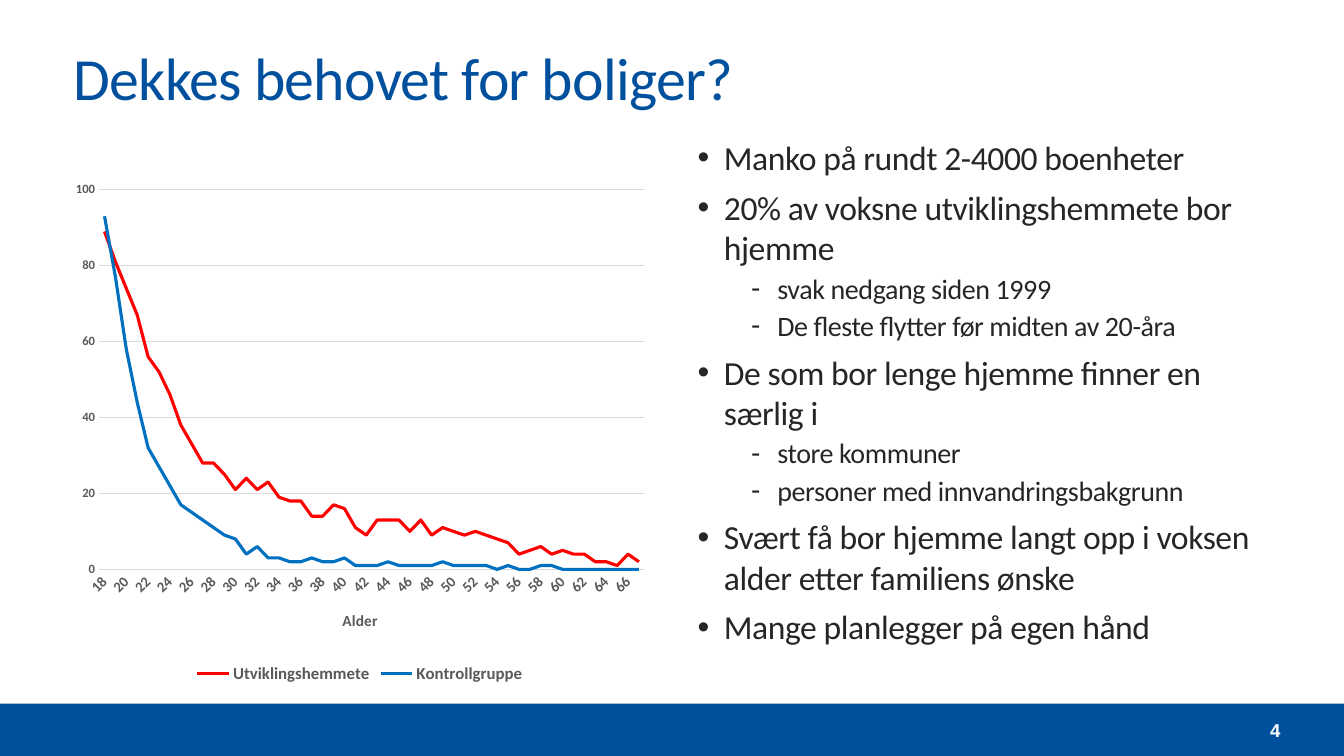
import pptx
import pptx.chart.data
import pptx.dml.color
import pptx.enum.chart
import pptx.enum.shapes
import pptx.enum.text
import pptx.oxml
import pptx.oxml.ns
import pptx.util
from dataclasses import dataclass


@dataclass(frozen=True)
class Theme:
    font: str = "Calibri"
    number_font: str = "Arial"
    blue: str = "00509E"
    white: str = "FFFFFF"
    body: str = "262626"
    chart_text: str = "595959"
    grid: str = "D9D9D9"
    red_line: str = "FF0000"
    blue_line: str = "0070C0"
    title_size: float = 42.7
    body_sizes: tuple = (24, 20)
    number_size: float = 13.3
    category_size: float = 10.5
    value_size: float = 9
    axis_title_size: float = 11
    legend_size: float = 12


theme = Theme()
Inches, Pt = pptx.util.Inches, pptx.util.Pt
color_of = pptx.dml.color.RGBColor.from_string
qn = pptx.oxml.ns.qn


def style_font(font, size, color, bold=False, name=theme.font):
    font.size = Pt(size)
    font.bold = bold
    font.name = name
    font.color.rgb = color_of(color)


def place(shape, left, top, width, height):
    shape.left, shape.top = Inches(left), Inches(top)
    shape.width, shape.height = Inches(width), Inches(height)


# Grid: two equal columns between the margins, footer along the bottom
slide_width, slide_height = 13.33, 7.5
margin, gap = 0.63, 0.31
content_width = slide_width - 2 * margin
column_width = (content_width - gap) / 2
right_column = margin + column_width + gap
footer_height = 0.52
footer_top = slide_height - footer_height
content_bottom = 6.82
title_top, title_height = 0.31, 0.9
body_top, chart_top = 1.31, 1.73

presentation = pptx.Presentation()
presentation.slide_width = Inches(slide_width)
presentation.slide_height = Inches(slide_height)
slide = presentation.slides.add_slide(presentation.slide_layouts[1])

# Footer bar and slide number
footer = slide.shapes.add_shape(pptx.enum.shapes.MSO_SHAPE.RECTANGLE, 0, 0, 0, 0)
place(footer, 0, footer_top, slide_width, footer_height)
footer.shadow.inherit = False
footer.fill.solid()
footer.fill.fore_color.rgb = color_of(theme.blue)
footer.line.fill.background()

number_width = 0.95
number_box = slide.shapes.add_textbox(0, 0, 0, 0)
place(number_box, slide_width - margin - number_width, footer_top, number_width, footer_height)
number_frame = number_box.text_frame
number_frame.word_wrap = True
number_frame.vertical_anchor = pptx.enum.text.MSO_ANCHOR.MIDDLE
number_frame.margin_left = number_frame.margin_right = 0
number_frame.margin_top = number_frame.margin_bottom = 0
paragraph = number_frame.paragraphs[0]
paragraph.alignment = pptx.enum.text.PP_ALIGN.RIGHT
run = paragraph.add_run()
run.text = "4"
style_font(run.font, theme.number_size, theme.white, True, theme.number_font)

# Title
title = slide.shapes.title
place(title, margin, title_top, content_width, title_height)
title.text_frame.auto_size = pptx.enum.text.MSO_AUTO_SIZE.NONE
title.text_frame.vertical_anchor = pptx.enum.text.MSO_ANCHOR.MIDDLE
paragraph = title.text_frame.paragraphs[0]
paragraph.alignment = pptx.enum.text.PP_ALIGN.LEFT
run = paragraph.add_run()
run.text = "Dekkes behovet for boliger?"
style_font(run.font, theme.title_size, theme.blue)
run.font._element.set("spc", "-50")

# Bullet list: level and wording
bullets = [
    (0, "Manko på rundt 2-4000 boenheter"),
    (0, "20% av voksne utviklingshemmete bor hjemme"),
    (1, "svak nedgang siden 1999"),
    (1, "De fleste flytter før midten av 20-åra"),
    (0, "De som bor lenge hjemme finner en særlig i"),
    (1, "store kommuner"),
    (1, "personer med innvandringsbakgrunn"),
    (0, "Svært få bor hjemme langt opp i voksen alder etter familiens ønske"),
    (0, "Mange planlegger på egen hånd"),
]
bullet_signs, indents, spaces_before = "•-", (0.26, 0.79), (6.7, 2.7)
hanging = 0.26

body = slide.placeholders[1]
place(body, right_column, body_top, column_width, content_bottom - body_top)
body.text_frame.auto_size = pptx.enum.text.MSO_AUTO_SIZE.NONE
for index, (level, text) in enumerate(bullets):
    paragraph = body.text_frame.add_paragraph() if index else body.text_frame.paragraphs[0]
    paragraph.level = level
    properties = paragraph._p.get_or_add_pPr()
    properties.set("marL", str(Inches(indents[level])))
    properties.set("indent", str(-Inches(hanging)))
    for tag, key, value in (("buFont", "typeface", "Arial"), ("buChar", "char", bullet_signs[level])):
        element = pptx.oxml.parse_xml(f'<a:{tag} {pptx.oxml.ns.nsdecls("a")}/>')
        element.set(key, value)
        properties.append(element)
    paragraph.space_before = Pt(spaces_before[level] if index else 0)
    run = paragraph.add_run()
    run.text = text
    style_font(run.font, theme.body_sizes[level], theme.body)
    run.font._element.set("spc", "-30")

# Line chart: share living at home by age
series_by_name = {
    "Utviklingshemmete": (theme.red_line, [
        89, 81, 74, 67, 56, 52, 46, 38, 33, 28, 28, 25, 21, 24, 21, 23, 19, 18, 18, 14, 14, 17, 16, 11, 9,
        13, 13, 13, 10, 13, 9, 11, 10, 9, 10, 9, 8, 7, 4, 5, 6, 4, 5, 4, 4, 2, 2, 1, 4, 2]),
    "Kontrollgruppe": (theme.blue_line, [
        93, 77, 58, 44, 32, 27, 22, 17, 15, 13, 11, 9, 8, 4, 6, 3, 3, 2, 2, 3, 2, 2, 3, 1, 1,
        1, 2, 1, 1, 1, 1, 2, 1, 1, 1, 1, 0, 1, 0, 0, 1, 1, 0, 0, 0, 0, 0, 0, 0, 0]),
}
chart_data = pptx.chart.data.CategoryChartData(number_format="0")
chart_data.categories = [str(age) for age in range(18, 68)]
for name, (color, values) in series_by_name.items():
    chart_data.add_series(name, values)
chart = slide.shapes.add_chart(
    pptx.enum.chart.XL_CHART_TYPE.LINE, Inches(margin), Inches(chart_top),
    Inches(column_width), Inches(content_bottom - chart_top), chart_data).chart
chart.has_title = False
style_font(chart.font, 10, theme.chart_text, True)
chart.plots[0].vary_by_categories = False
for series in chart.plots[0].series:
    series.smooth = False
    series.format.line.color.rgb = color_of(series_by_name[series.name][0])
    series.format.line.width = Pt(2.25)

chart.has_legend = True
chart.legend.position = pptx.enum.chart.XL_LEGEND_POSITION.BOTTOM
chart.legend.include_in_layout = False
style_font(chart.legend.font, theme.legend_size, theme.chart_text, True)

# Axes
ages, shares = chart.category_axis, chart.value_axis
for axis, size in ((ages, theme.category_size), (shares, theme.value_size)):
    axis.major_tick_mark = axis.minor_tick_mark = pptx.enum.chart.XL_TICK_MARK.NONE
    style_font(axis.tick_labels.font, size, theme.chart_text, True)
shares.minimum_scale, shares.maximum_scale, shares.major_unit = 0, 100, 20
shares.tick_labels.number_format = "0"
shares.tick_labels.number_format_is_linked = False
shares.format.line.fill.background()
shares.has_major_gridlines = True
for line in (shares.major_gridlines.format.line, ages.format.line):
    line.color.rgb = color_of(theme.grid)
    line.width = Pt(0.75)
run = ages.axis_title.text_frame.paragraphs[0].add_run()
run.text = "Alder"
style_font(run.font, theme.axis_title_size, theme.chart_text, True)

# Slanted label for every second age
ages._element.find(qn("c:txPr")).find(qn("a:bodyPr")).set("rot", "-2700000")
chart_namespace = pptx.oxml.ns.nsdecls("c")
ages._element.find(qn("c:noMultiLvlLbl")).addprevious(
    pptx.oxml.parse_xml(f'<c:tickLblSkip {chart_namespace} val="2"/>'))

# Plot area as shares of the chart frame
plot_area = chart._chartSpace.chart.plotArea
for layout in plot_area.findall(qn("c:layout")):
    plot_area.remove(layout)
shares_of_frame = {"x": 0.06, "y": 0.03, "w": 0.92, "h": 0.74}
entries = '<c:layoutTarget val="inner"/><c:xMode val="edge"/><c:yMode val="edge"/>'
entries += "".join(f'<c:{key} val="{share}"/>' for key, share in shares_of_frame.items())
plot_area.insert(0, pptx.oxml.parse_xml(
    f"<c:layout {chart_namespace}><c:manualLayout>{entries}</c:manualLayout></c:layout>"))

presentation.save("out.pptx")
